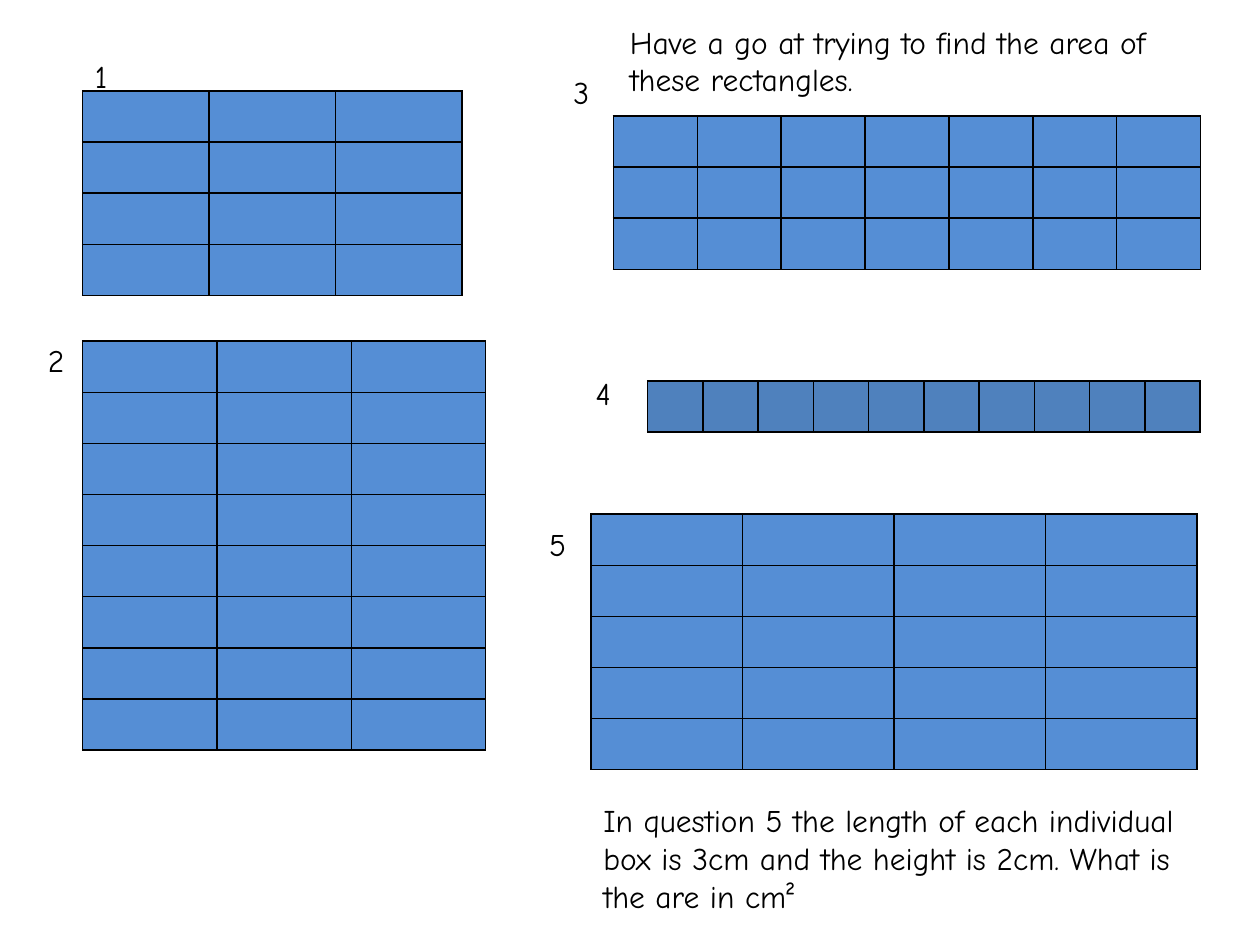
from lxml import etree
from pptx import Presentation
from pptx.dml.color import RGBColor
from pptx.enum import text
from pptx.oxml import ns
from pptx.util import Pt

FONT = "Comic Neue"
BLACK = "000000"
BLUE = "558ED5"
DARK_BLUE = "4F81BD"
ROW_HEIGHT = 29.2
LABEL_SIZE = (26.5, 29)


def color(value):
    """Turn a hex string into a colour."""
    return RGBColor.from_string(value)


def add_text(slide, box, content, size=18, font=FONT, fill=BLACK):
    """Place a wrapped text box at box (left, top, width, height)."""
    shape = slide.shapes.add_textbox(*map(Pt, box))
    frame = shape.text_frame
    frame.word_wrap = True
    frame.auto_size = text.MSO_AUTO_SIZE.SHAPE_TO_FIT_TEXT
    paragraph = frame.paragraphs[0]
    run = paragraph.add_run()
    run.text = content
    run.font.size = Pt(size)
    run.font.name = font
    run.font.color.rgb = color(fill)
    return shape


def add_borders(cell, width=1, line_color=BLACK):
    """Draw a solid line on all four sides of a cell."""
    properties = cell._tc.get_or_add_tcPr()
    for side in ("lnL", "lnR", "lnT", "lnB"):
        line = etree.SubElement(properties, ns.qn(f"a:{side}"), w=str(Pt(width)))
        solid = etree.SubElement(line, ns.qn("a:solidFill"))
        etree.SubElement(solid, ns.qn("a:srgbClr"), val=line_color)


def add_question(slide, number, box, rows, columns, label_offset, fill=BLUE):
    """Place a numbered grid at box (left, top, width)."""
    left, top, width = box
    frame = slide.shapes.add_table(
        rows, columns, Pt(left), Pt(top), Pt(width), Pt(rows * ROW_HEIGHT)
    )
    table = frame.table
    table.first_row = False
    table.horz_banding = False
    for column in table.columns:
        column.width = Pt(width / columns)
    for row in table.rows:
        row.height = Pt(ROW_HEIGHT)
    for cell in table.iter_cells():
        add_borders(cell)
        cell.fill.solid()
        cell.fill.fore_color.rgb = color(fill)
    across, down = label_offset
    add_text(slide, (left + across, top + down, *LABEL_SIZE), str(number))


def build_slide(presentation):
    """Build the slide of rectangle area questions."""
    slide = presentation.slides.add_slide(presentation.slide_layouts[6])
    add_question(slide, 1, (47.2, 52, 217), 4, 3, (0, -23))
    add_question(slide, 2, (47.2, 195, 230.4), 8, 3, (-27, -3.5))
    add_question(slide, 3, (350.5, 66.3, 335.7), 3, 7, (-30, -28))
    add_question(slide, 4, (370, 217.6, 316), 1, 10, (-36.7, -7.4), DARK_BLUE)
    add_question(slide, 5, (337.7, 293.8, 346.3), 5, 4, (-31, 2.8))
    add_text(
        slide,
        (337.7, 454.3, 346.3, 72.7),
        "In question 5 the length of each individual box is 3cm "
        "and the height is 2cm. What is the are in cm²",
    )
    add_text(
        slide,
        (352.8, 9.4, 316, 51),
        "Have a go at trying to find the area of these rectangles.",
    )


def main():
    """Create and save the presentation."""
    presentation = Presentation()
    presentation.slide_width = Pt(720)
    presentation.slide_height = Pt(540)
    build_slide(presentation)
    presentation.save("out.pptx")


if __name__ == "__main__":
    main()
